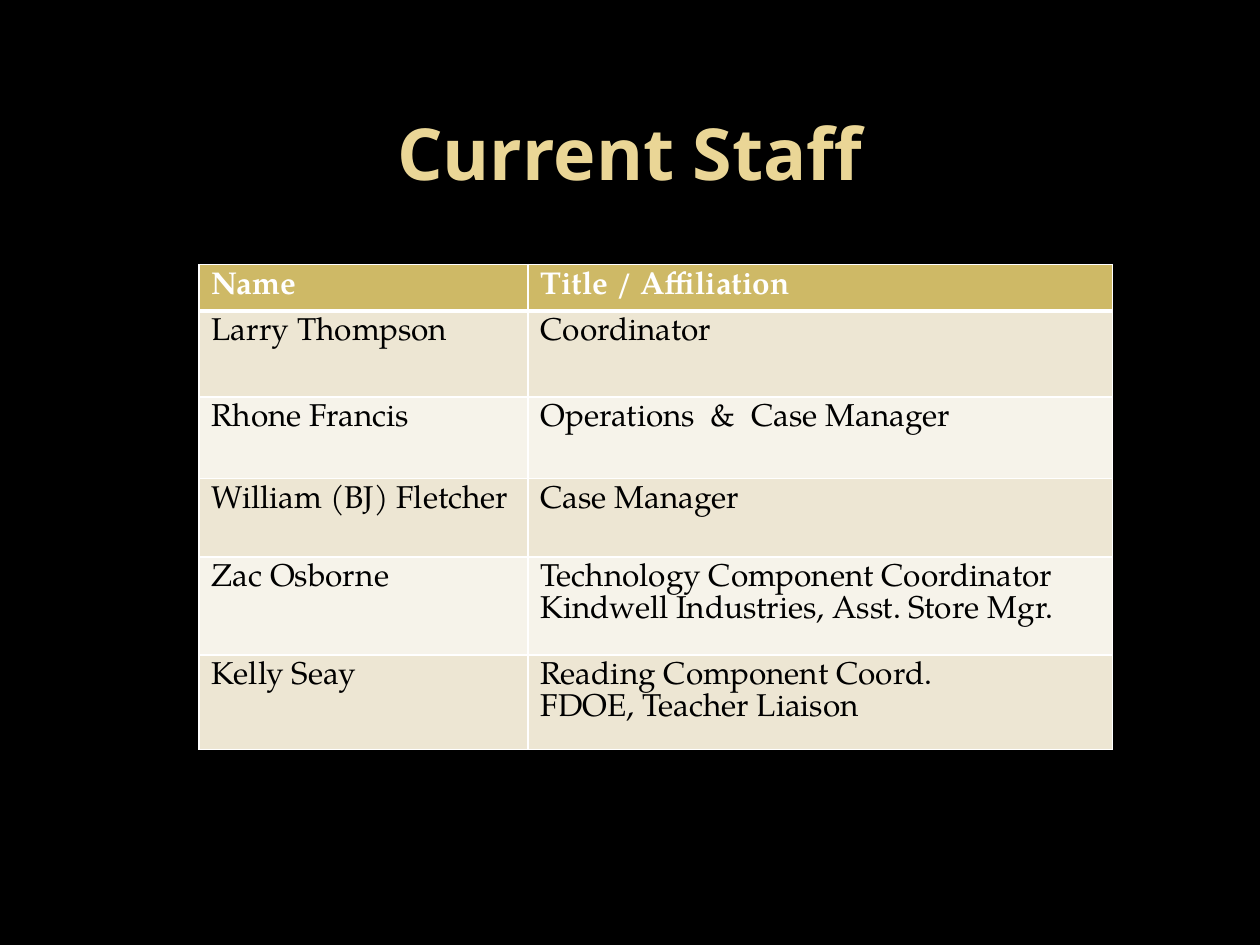
from lxml import etree
from pptx import Presentation
from pptx.dml.color import RGBColor
from pptx.enum import text
from pptx.oxml import ns
from pptx.util import Inches, Pt

BLACK = RGBColor(0x00, 0x00, 0x00)
WHITE = RGBColor(0xFF, 0xFF, 0xFF)
PALE_GOLD = RGBColor(0xEA, 0xD6, 0x96)
GOLD = RGBColor(0xCE, 0xB9, 0x66)
BANDS = [RGBColor(0xF6, 0xF3, 0xEA), RGBColor(0xED, 0xE6, 0xD3)]

STAFF = [
    ("Name", "Title / Affiliation"),
    ("Larry Thompson", "Coordinator"),
    ("Rhone Francis", "Operations  &  Case Manager"),
    ("William (BJ) Fletcher", "Case Manager"),
    ("Zac Osborne", "Technology Component Coordinator\nKindwell Industries, Asst. Store Mgr."),
    ("Kelly Seay", "Reading Component Coord.\nFDOE, Teacher Liaison"),
]
COLUMN_WIDTHS = [2.61, 4.64]
ROW_HEIGHTS = [0.37, 0.68, 0.65, 0.62, 0.78, 0.75]


def add_run(paragraph, words, font, size, color, bold):
    run = paragraph.add_run()
    run.text = words
    run.font.name = font
    run.font.size = Pt(size)
    run.font.color.rgb = color
    run.font.bold = bold


def add_border(cell, side, points):
    properties = cell._tc.get_or_add_tcPr()
    line = etree.SubElement(properties, ns.qn(f"a:ln{side}"), w=str(Pt(points)))
    fill = etree.SubElement(line, ns.qn("a:solidFill"))
    etree.SubElement(fill, ns.qn("a:srgbClr"), val=str(WHITE))


prs = Presentation()
prs.slide_width = Inches(10)
prs.slide_height = Inches(7.5)
slide = prs.slides.add_slide(prs.slide_layouts[5])
slide.background.fill.solid()
slide.background.fill.fore_color.rgb = BLACK

# Title
title = slide.shapes.title
title.left, title.top = Inches(0.5), Inches(0.58)
title.width, title.height = Inches(9), Inches(1.25)
title.text_frame.vertical_anchor = text.MSO_ANCHOR.MIDDLE
heading = title.text_frame.paragraphs[0]
heading.alignment = text.PP_ALIGN.CENTER
add_run(heading, "Current Staff", "Noto Sans", 41, PALE_GOLD, True)

# Staff table
staff = slide.shapes.add_table(
    len(STAFF), len(COLUMN_WIDTHS), Inches(1.58), Inches(2.1),
    Inches(sum(COLUMN_WIDTHS)), Inches(sum(ROW_HEIGHTS))).table
for column, width in zip(staff.columns, COLUMN_WIDTHS):
    column.width = Inches(width)
for row, height in zip(staff.rows, ROW_HEIGHTS):
    row.height = Inches(height)

for r, entry in enumerate(STAFF):
    header = r == 0
    for c, content in enumerate(entry):
        cell = staff.cell(r, c)

        # Borders come before the fill; the rule under the header is heavier
        for side in "LRTB":
            under_header = (r, side) in [(0, "B"), (1, "T")]
            add_border(cell, side, 3 if under_header else 1)
        cell.fill.solid()
        cell.fill.fore_color.rgb = GOLD if header else BANDS[r % 2]

        # One paragraph per line, set tight
        for i, words in enumerate(content.split("\n")):
            frame = cell.text_frame
            paragraph = frame.add_paragraph() if i else frame.paragraphs[0]
            paragraph.line_spacing = Pt(18.25)
            add_run(paragraph, words, "TeX Gyre Pagella", 18,
                    WHITE if header else BLACK, header)

prs.save("out.pptx")
